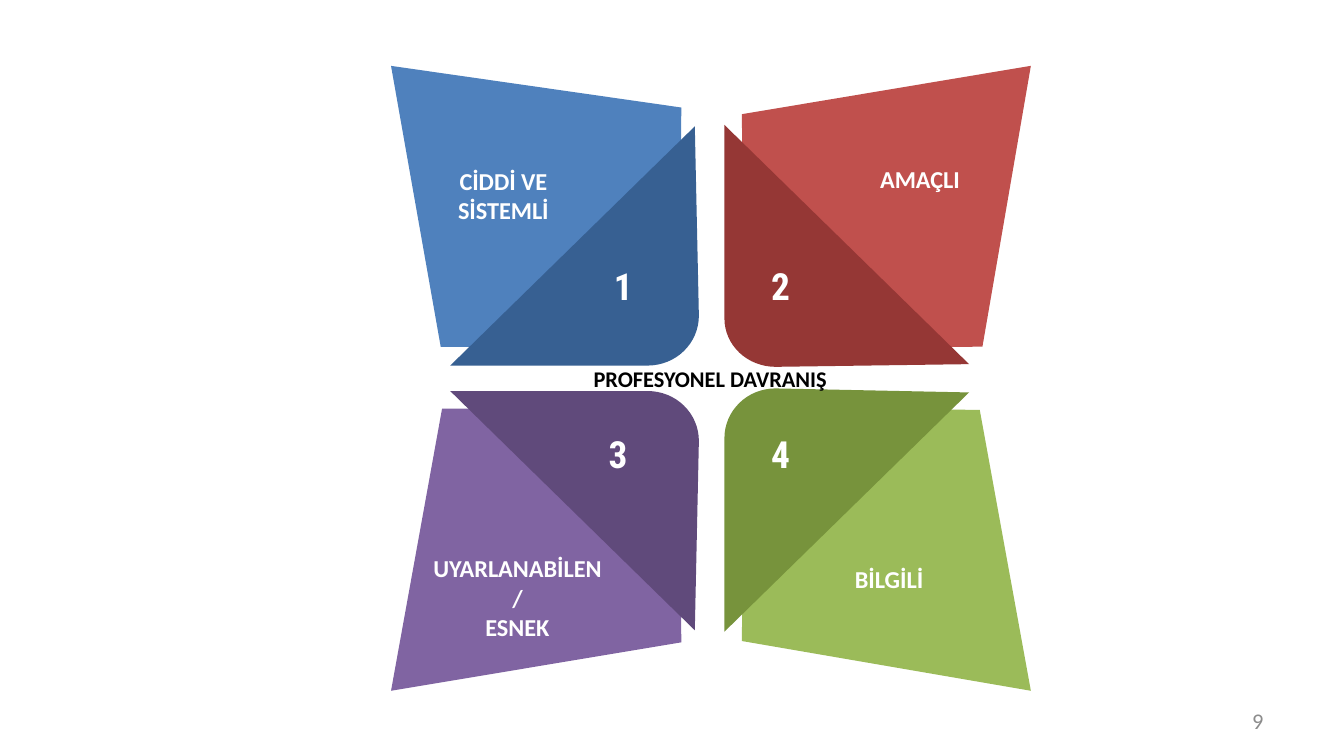
import math
from pptx import Presentation
from pptx import util as u
from pptx.dml import color
from pptx.enum import text

THEME = {
    "blue": "4F81BD", "dark blue": "376092",
    "red": "C0504D", "dark red": "953735",
    "purple": "8064A2", "dark purple": "604A7B",
    "green": "9BBB59", "dark green": "77933C",
    "white": "FFFFFF", "black": "000000", "grey": "8C8C8C",
    "label size": 13, "number size": 20, "small size": 12,
    "label font": "Calibri", "number font": "Roboto Condensed",
}
ARC_STEPS = 16


def add_petal(group, points, fill):
    *edges, (ax, ay), (bx, by) = points
    angles = [math.pi / 2 * step / ARC_STEPS for step in range(ARC_STEPS + 1)]
    arc = [(ax + (bx - ax) * math.sin(angle), by + (ay - by) * math.cos(angle))
           for angle in angles]
    outline = [(u.Inches(x), u.Inches(y)) for x, y in edges + arc]
    builder = group.shapes.build_freeform(*outline[0])
    builder.add_line_segments(outline[1:], close=True)
    petal = builder.convert_to_shape()
    petal.shadow.inherit = False
    petal.fill.solid()
    petal.fill.fore_color.rgb = color.RGBColor.from_string(THEME[fill])
    petal.line.fill.background()


def write(box, wording, place, font, size, ink, align, bold=True, wrap=True,
          anchor=text.MSO_ANCHOR.TOP):
    for side, length in zip(("left", "top", "width", "height"), place):
        setattr(box, side, u.Inches(length))
    frame = box.text_frame
    frame_format = {"word_wrap": wrap, "auto_size": text.MSO_AUTO_SIZE.NONE,
                    "vertical_anchor": anchor}
    for name, value in frame_format.items():
        setattr(frame, name, value)
    para = frame.paragraphs[0]
    para.alignment = align
    for index, line in enumerate(wording.split("\n")):
        if index:
            para.add_line_break()
        span = para.add_run()
        span.text = line
        span_format = {"name": THEME[font], "size": u.Pt(THEME[size]), "bold": bold}
        for name, value in span_format.items():
            setattr(span.font, name, value)
        span.font.color.rgb = color.RGBColor.from_string(THEME[ink])


deck = Presentation()
deck.slide_width = u.Inches(10)
deck.slide_height = u.Inches(10) * 9 // 16
page = deck.slides.add_slide(deck.slide_layouts[5])

petals = [
    ("red",
     [(5.52, 0.85), (7.67, 0.49), (7.31, 2.58), (5.9, 2.59), (5.53, 2.22)],
     [(5.39, 0.93), (7.21, 2.71), (5.77, 2.73), (5.39, 2.37)]),
    ("blue",
     [(5.07, 0.8), (2.91, 0.49), (3.28, 2.58), (4.68, 2.58), (5.06, 2.21)],
     [(5.17, 0.94), (3.35, 2.72), (4.82, 2.72), (5.2, 2.35)]),
    ("purple",
     [(5.07, 4.78), (2.91, 5.14), (3.29, 3.04), (4.68, 3.05), (5.06, 3.42)],
     [(5.17, 4.69), (3.35, 2.91), (4.82, 2.91), (5.2, 3.28)]),
    ("green",
     [(5.52, 4.77), (7.67, 5.14), (7.29, 3.05), (5.9, 3.04), (5.53, 3.41)],
     [(5.39, 4.7), (7.21, 2.92), (5.77, 2.89), (5.39, 3.26)]),
]
for hue, outer, inner in petals:
    group = page.shapes.add_group_shape()
    add_petal(group, outer, hue)
    add_petal(group, inner, f"dark {hue}")

labels = [
    ("CİDDİ VE SİSTEMLİ", (3.02, 1.19, 1.45, 0.76)),
    ("UYARLANABİLEN/\nESNEK", (3.11, 4.07, 1.48, 0.76)),
    ("BİLGİLİ", (5.89, 4.15, 1.45, 0.32)),
    ("AMAÇLI", (6.12, 1.17, 1.45, 0.32)),
]
for wording, place in labels:
    box = page.shapes.add_textbox(0, 0, 0, 0)
    write(box, wording, place, "label font", "label size", "white", text.PP_ALIGN.CENTER)

numbers = [
    ("1", (4.47, 1.91, 0.27, 0.44)),
    ("2", (5.64, 1.91, 0.33, 0.44)),
    ("3", (4.43, 3.16, 0.33, 0.44)),
    ("4", (5.64, 3.16, 0.33, 0.44)),
]
for wording, place in numbers:
    box = page.shapes.add_textbox(0, 0, 0, 0)
    write(box, wording, place, "number font", "number size", "white",
          text.PP_ALIGN.LEFT, wrap=False)

title = page.shapes.title
write(title, "PROFESYONEL DAVRANIŞ", (3.47, 2.67, 3.63, 0.5),
      "label font", "small size", "black", text.PP_ALIGN.CENTER)
page.shapes._spTree.append(title._element)

page_number = page.shapes.add_textbox(0, 0, 0, 0)
write(page_number, "9", (7.17, 5.21, 2.33, 0.3), "label font", "small size", "grey",
      text.PP_ALIGN.RIGHT, bold=False, anchor=text.MSO_ANCHOR.MIDDLE)

deck.save("out.pptx")
